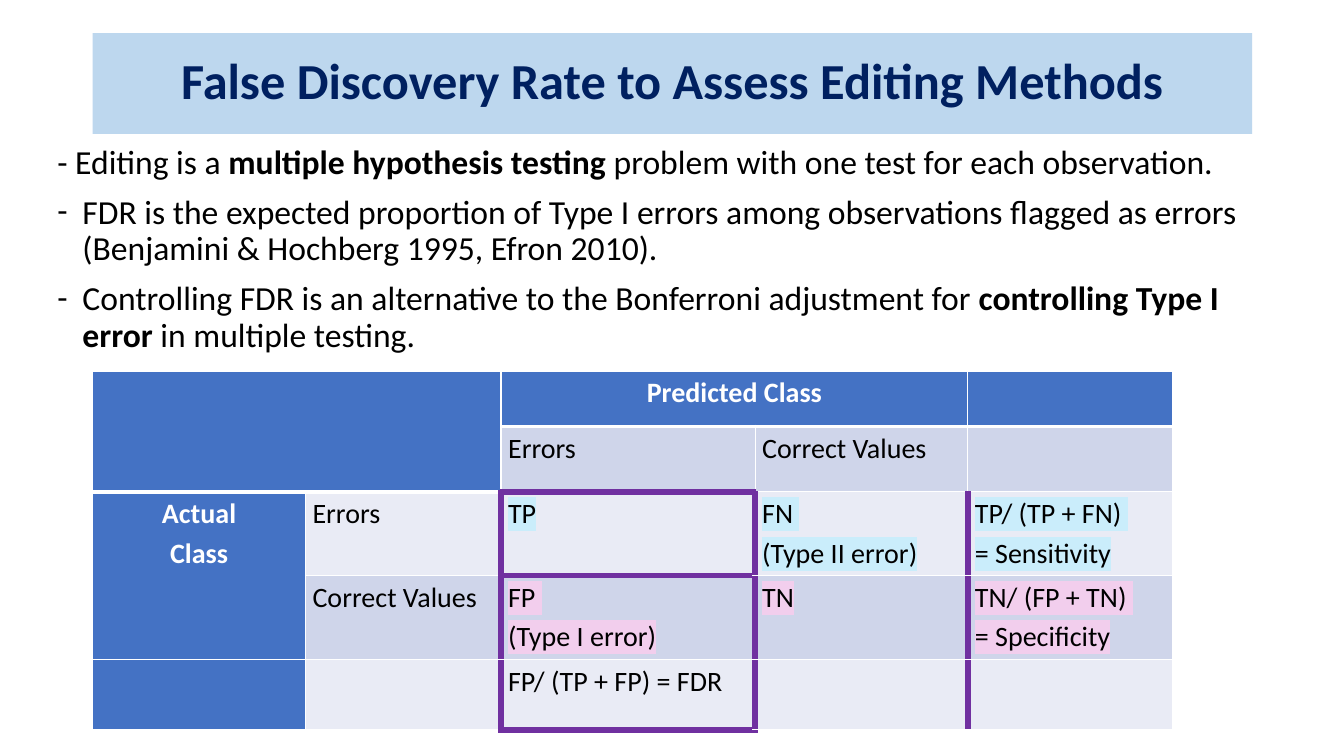
from dataclasses import dataclass

from lxml import etree
from pptx import Presentation
from pptx.dml.color import RGBColor
from pptx.enum.shapes import MSO_SHAPE
from pptx.enum.text import MSO_ANCHOR, PP_ALIGN
from pptx.oxml.ns import qn
from pptx.util import Inches, Pt

RECTANGLE = MSO_SHAPE.RECTANGLE
MIDDLE = MSO_ANCHOR.MIDDLE
LEFT, CENTER = PP_ALIGN.LEFT, PP_ALIGN.CENTER

FONT = "Calibri"
WHITE, BLACK, NAVY, PURPLE = "FFFFFF", "000000", "002060", "7030A0"
TITLE_BAND, HEADER, BAND_DARK, BAND_LIGHT = "BDD7EE", "4472C4", "CFD5EA", "E9EBF5"
SENSITIVITY, SPECIFICITY = "CAEDFB", "F2CEED"
THIN, THICK, FRAME = (WHITE, 1), (WHITE, 3), (PURPLE, 4.5)

COLUMN_WIDTHS = (2.11, 1.94, 2.52, 2.11, 2.03)
ROW_HEIGHTS = (0.55, 0.65, 0.83, 0.83, 0.7)


@dataclass(frozen=True)
class Phrase:
    text: str
    bold: bool = False


@dataclass(frozen=True)
class Statement:
    phrases: tuple[Phrase, ...]
    dashed: bool = True


@dataclass(frozen=True)
class Entry:
    row: int
    column: int
    lines: tuple[str, ...]
    highlight: str = ""


@dataclass(frozen=True)
class Span:
    row: int
    column: int
    last_row: int
    last_column: int


STATEMENTS = (
    Statement((Phrase("- Editing is a "), Phrase("multiple hypothesis testing ", True),
               Phrase("problem with one test for each observation.")), dashed=False),
    Statement((Phrase("FDR is the expected proportion of Type I errors among observations "
                      "flagged as errors (Benjamini & Hochberg 1995, Efron 2010)."),)),
    Statement((Phrase("Controlling FDR is an alternative to the Bonferroni adjustment for "),
               Phrase("controlling Type I error ", True), Phrase("in multiple testing."))),
)

ENTRIES = (
    Entry(0, 2, ("Predicted Class",)),
    Entry(1, 2, ("Errors",)),
    Entry(1, 3, ("Correct Values",)),
    Entry(2, 0, ("Actual", "Class")),
    Entry(2, 1, ("Errors",)),
    Entry(2, 2, ("TP",), SENSITIVITY),
    Entry(2, 3, ("FN ", "(Type II error)"), SENSITIVITY),
    Entry(2, 4, ("TP/ (TP + FN) ", "= Sensitivity"), SENSITIVITY),
    Entry(3, 1, ("Correct Values",)),
    Entry(3, 2, ("FP ", "(Type I error)"), SPECIFICITY),
    Entry(3, 3, ("TN",), SPECIFICITY),
    Entry(3, 4, ("TN/ (FP + TN) ", "= Specificity"), SPECIFICITY),
    Entry(4, 2, ("FP/ (TP + FP) = FDR",)),
)

SPANS = (Span(0, 0, 1, 1), Span(0, 2, 0, 3), Span(2, 0, 3, 0))


def color(value: str) -> RGBColor:
    return RGBColor.from_string(value)


def add_run(paragraph, text: str, size: float, ink: str, bold: bool = False,
            highlight: str = "") -> None:
    run = paragraph.add_run()
    run.text = text
    run.font.name, run.font.size, run.font.bold = FONT, Pt(size), bold
    run.font.color.rgb = color(ink)
    if highlight:
        marker = etree.Element(qn("a:highlight"))
        etree.SubElement(marker, qn("a:srgbClr"), val=highlight)
        run.font._element.find(qn("a:solidFill")).addnext(marker)


def next_paragraph(frame, index: int):
    return frame.add_paragraph() if index else frame.paragraphs[0]


def add_title(slide) -> None:
    band = slide.shapes.add_shape(RECTANGLE, Inches(0.92), Inches(0.33), Inches(11.5), Inches(1))
    band.shadow.inherit = False
    band.fill.solid()
    band.fill.fore_color.rgb = color(TITLE_BAND)
    band.line.fill.background()
    band.text_frame.vertical_anchor = MIDDLE
    heading = band.text_frame.paragraphs[0]
    heading.alignment, heading.line_spacing = CENTER, 0.9
    add_run(heading, "False Discovery Rate to Assess Editing Methods", 36, NAVY, True)


def add_statements(slide) -> None:
    body = slide.shapes.add_textbox(Inches(0.47), Inches(1.39), Inches(12.34), Inches(2.25))
    body.text_frame.word_wrap = True
    for index, statement in enumerate(STATEMENTS):
        paragraph = next_paragraph(body.text_frame, index)
        paragraph.line_spacing, paragraph.space_before = 0.9, Pt(10)
        if statement.dashed:
            properties = paragraph._p.get_or_add_pPr()
            properties.set("marL", str(Inches(0.25)))
            properties.set("indent", str(Inches(-0.25)))
            etree.SubElement(properties, qn("a:buFont"), typeface=FONT)
            etree.SubElement(properties, qn("a:buChar"), char="-")
        for phrase in statement.phrases:
            add_run(paragraph, phrase.text, 24, BLACK, phrase.bold)


def is_header(row: int, column: int) -> bool:
    return row == 0 or column == 0 or (row, column) == (1, 1)


def horizontal_edge(boundary: int, column: int) -> tuple[str, float]:
    if column == 2 and boundary in (2, 3, 5):
        return FRAME
    if boundary == (2 if column < 2 else 1):
        return THICK
    return THIN


def vertical_edge(boundary: int, row: int) -> tuple[str, float]:
    return FRAME if row >= 2 and boundary in (2, 3, 4) else THIN


def set_borders(cell, row: int, column: int) -> None:
    below = row + (cell.span_height if cell.is_merge_origin else 1)
    beyond = column + (cell.span_width if cell.is_merge_origin else 1)
    edges = {
        "a:lnL": vertical_edge(column, row),
        "a:lnR": vertical_edge(beyond, row),
        "a:lnT": horizontal_edge(row, column),
        "a:lnB": horizontal_edge(below, column),
    }
    properties = cell._tc.get_or_add_tcPr()
    for tag, (ink, width) in edges.items():
        line = etree.SubElement(properties, qn(tag), w=str(Pt(width)))
        paint = etree.SubElement(line, qn("a:solidFill"))
        etree.SubElement(paint, qn("a:srgbClr"), val=ink)


def add_confusion_table(slide) -> None:
    table = slide.shapes.add_table(
        len(ROW_HEIGHTS), len(COLUMN_WIDTHS), Inches(0.92), Inches(3.68),
        Inches(sum(COLUMN_WIDTHS)), Inches(sum(ROW_HEIGHTS))).table
    for column, width in zip(table.columns, COLUMN_WIDTHS):
        column.width = Inches(width)
    for row, height in zip(table.rows, ROW_HEIGHTS):
        row.height = Inches(height)
    for span in SPANS:
        table.cell(span.row, span.column).merge(table.cell(span.last_row, span.last_column))

    # Borders and fills
    for row in range(len(ROW_HEIGHTS)):
        for column in range(len(COLUMN_WIDTHS)):
            cell = table.cell(row, column)
            cell.margin_left = cell.margin_right = Inches(0.07)
            cell.margin_top = cell.margin_bottom = 0
            set_borders(cell, row, column)
            band = BAND_DARK if row % 2 else BAND_LIGHT
            cell.fill.solid()
            cell.fill.fore_color.rgb = color(HEADER if is_header(row, column) else band)

    # Wording
    for entry in ENTRIES:
        header = is_header(entry.row, entry.column)
        frame = table.cell(entry.row, entry.column).text_frame
        for index, text in enumerate(entry.lines):
            paragraph = next_paragraph(frame, index)
            paragraph.alignment, paragraph.line_spacing = CENTER if header else LEFT, 1.15
            add_run(paragraph, text, 20, WHITE if header else BLACK, header, entry.highlight)


def main() -> None:
    deck = Presentation()
    deck.slide_width, deck.slide_height = Inches(13.33), Inches(7.5)
    slide = deck.slides.add_slide(deck.slide_layouts[6])
    add_title(slide)
    add_statements(slide)
    add_confusion_table(slide)
    deck.save("out.pptx")


if __name__ == "__main__":
    main()
